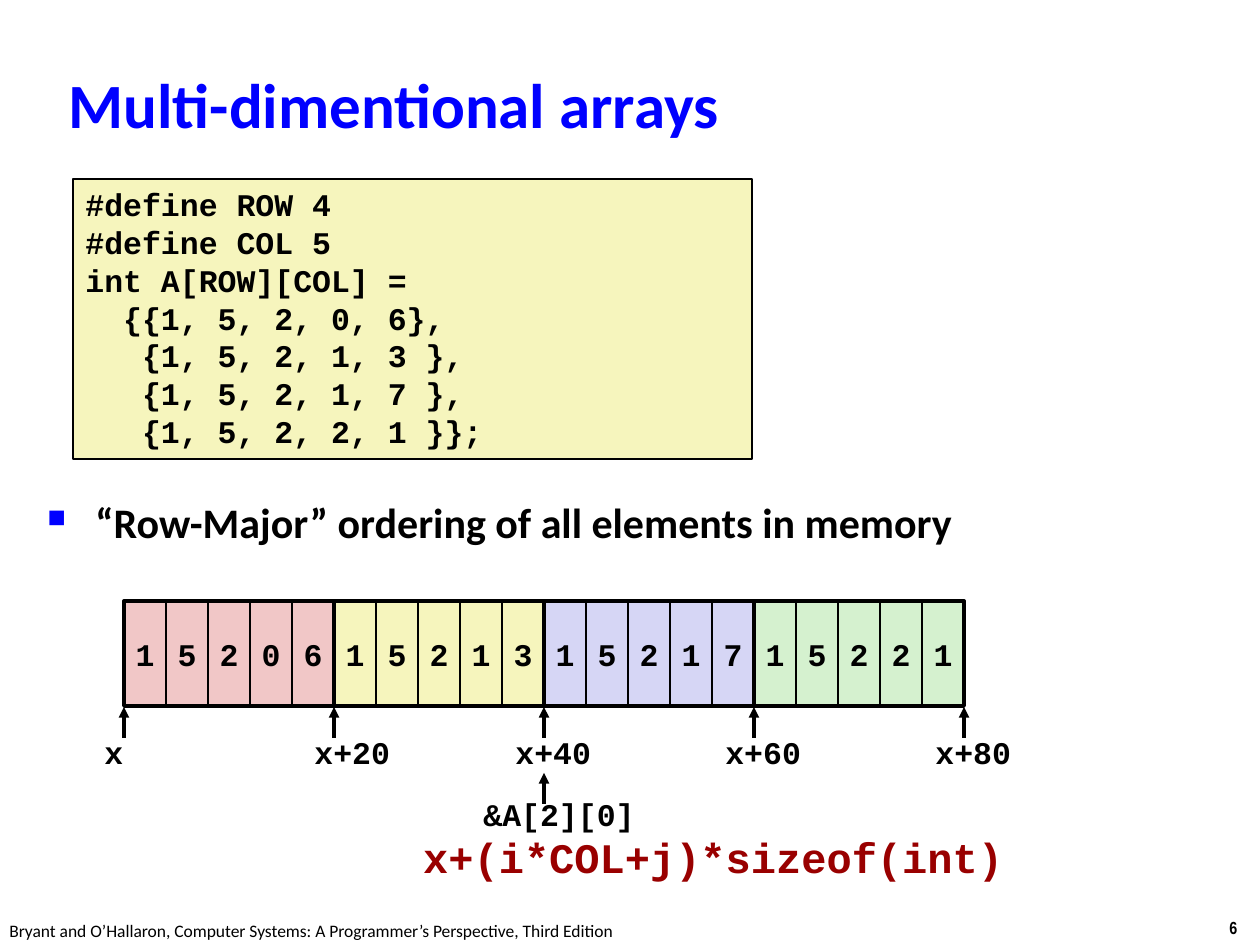
from pptx import Presentation
from pptx.dml.color import RGBColor
from pptx.enum.shapes import MSO_CONNECTOR, MSO_SHAPE
from pptx.enum.text import MSO_ANCHOR, PP_ALIGN
from pptx.oxml.ns import qn
from pptx.util import Emu, Pt
from lxml.etree import SubElement

EMU_PER_PX = 914400 / 126
MONO = "Courier New"
SANS = "Calibri"
BLACK = "000000"
BLUE = "0000FF"
CREAM = "F6F5BD"

CODE = """#define ROW 4
#define COL 5
int A[ROW][COL] =
  {{1, 5, 2, 0, 6},
   {1, 5, 2, 1, 3 },
   {1, 5, 2, 1, 7 },
   {1, 5, 2, 2, 1 }};"""
ROWS = [("15206", "F1C7C7"), ("15213", CREAM), ("15217", "D6D6F5"), ("15221", "D5F1CF")]
ADDRESSES = [("x", 92, 44), ("x+20", 302, 102), ("x+40", 503, 102),
             ("x+60", 713, 102), ("x+80", 923, 102)]
MEM_X, MEM_Y, CELL_W, CELL_H = 124, 601, 42, 105
ROW_W = 5 * CELL_W


def px(n):
    return Emu(round(n * EMU_PER_PX))


def color(value):
    return RGBColor.from_string(value)


def write(sp, text, size, font=MONO, fill=BLACK, bold=True, align=PP_ALIGN.LEFT):
    tf = sp.text_frame
    tf.text = text
    for p in tf.paragraphs:
        p.alignment = align
        for r in p.runs:
            r.font.size = Pt(size)
            r.font.name = font
            r.font.bold = bold
            r.font.color.rgb = color(fill)
    return tf


def indent(p, n):
    pPr = p._p.get_or_add_pPr()
    pPr.set("marL", str(px(n)))
    pPr.set("indent", str(-px(n)))
    return pPr


def add_title(s, text, x, y, w, h):
    sp = s.shapes.title
    sp.left, sp.top, sp.width, sp.height = px(x), px(y), px(w), px(h)
    tf = write(sp, text, 36, SANS, BLUE)
    tf.vertical_anchor = MSO_ANCHOR.MIDDLE
    indent(tf.paragraphs[0], 16)


def add_label(s, text, x, y, w, h, size=18, wrap=False, **style):
    sp = s.shapes.add_textbox(px(x), px(y), px(w), px(h))
    tf = write(sp, text, size, **style)
    tf.word_wrap = wrap
    return tf


def add_bullet(s, text, x, y, w, h):
    p = add_label(s, text, x, y, w, h, 24, True, font=SANS).paragraphs[0]
    p.space_before = Pt(4.8)
    pPr = indent(p, 48)
    SubElement(SubElement(pPr, qn("a:buClr")), qn("a:srgbClr"), val=BLUE)
    SubElement(pPr, qn("a:buSzPct"), val="60000")
    SubElement(pPr, qn("a:buChar"), char="■")


def add_box(shapes, x, y, w, h, fill=None, line=1):
    sp = shapes.add_shape(MSO_SHAPE.RECTANGLE, px(x), px(y), px(w), px(h))
    sp.shadow.inherit = False
    if fill:
        sp.fill.solid()
        sp.fill.fore_color.rgb = color(fill)
    else:
        sp.fill.background()
    sp.line.color.rgb = color(BLACK)
    sp.line.width = Pt(line)
    return sp


def add_code(s, text, x, y, w, h):
    tf = write(add_box(s.shapes, x, y, w, h, CREAM), text, 18)
    tf.vertical_anchor = MSO_ANCHOR.TOP


def add_memory_row(s, x, digits, fill):
    group = s.shapes.add_group_shape()
    for i, digit in enumerate(digits):
        sp = add_box(group.shapes, x + i * CELL_W, MEM_Y, CELL_W, CELL_H, fill)
        tf = write(sp, digit, 18, align=PP_ALIGN.CENTER)
        tf.vertical_anchor = MSO_ANCHOR.MIDDLE
        tf.word_wrap = False


def add_up_arrow(s, x, bottom, top):
    c = s.shapes.add_connector(MSO_CONNECTOR.STRAIGHT, px(x), px(bottom), px(x), px(top))
    c.line.color.rgb = color(BLACK)
    c.line.width = Pt(2)
    SubElement(c.line._get_or_add_ln(), qn("a:tailEnd"), type="triangle")
    SubElement(c._element.spPr, qn("a:effectLst"))


def main():
    prs = Presentation()
    prs.slide_width, prs.slide_height = px(1260), px(945)
    s = prs.slides.add_slide(prs.slide_layouts[5])

    add_label(s, "6", 1217, 911, 43, 34, 10, font="Arial Narrow")
    add_label(s, "Bryant and O’Hallaron, Computer Systems: A Programmer’s Perspective, Third Edition",
              -3, 914, 640, 34, 10, font=SANS, bold=False)
    add_title(s, "Multi-dimentional arrays", 56, 63, 878, 80)
    add_bullet(s, "“Row-Major” ordering of all elements in memory", 35, 490, 1103, 92)
    add_code(s, CODE, 73, 179, 679, 280)

    for i, (text, x, w) in enumerate(ADDRESSES):
        add_up_arrow(s, MEM_X + i * ROW_W, 738, 707)
        add_label(s, text, x, 727, w, 50)
    for i, (digits, fill) in enumerate(ROWS):
        add_memory_row(s, MEM_X + i * ROW_W, digits, fill)
    for i in range(len(ROWS)):
        add_box(s.shapes, MEM_X + i * ROW_W, MEM_Y, ROW_W, CELL_H, line=2.25)

    add_label(s, "x+(i*COL+j)*sizeof(int)", 401, 825, 624, 63, 24, True,
              fill="990000", align=PP_ALIGN.CENTER)
    add_label(s, "&A[2][0]", 471, 789, 178, 50)
    add_up_arrow(s, MEM_X + 2 * ROW_W, 804, 773)
    prs.save("out.pptx")


if __name__ == "__main__":
    main()
